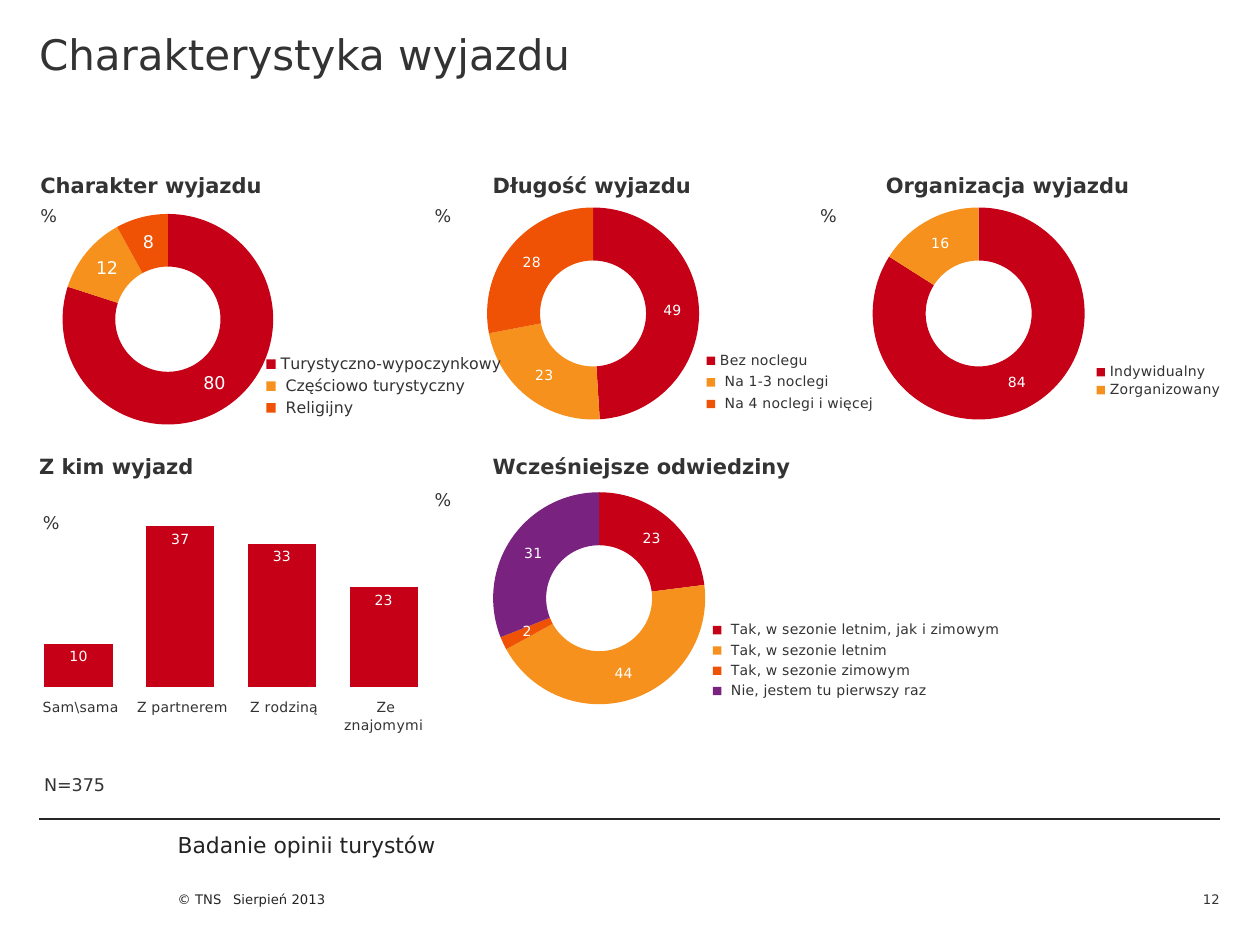
from lxml.etree import SubElement
from pptx import Presentation
from pptx.chart.data import CategoryChartData
from pptx.dml.color import RGBColor
from pptx.enum.chart import XL_CHART_TYPE, XL_LABEL_POSITION, XL_LEGEND_POSITION
from pptx.enum.shapes import MSO_CONNECTOR
from pptx.enum.text import MSO_ANCHOR, PP_ALIGN
from pptx.oxml import parse_xml
from pptx.oxml.ns import nsdecls, qn
from pptx.util import Inches, Pt

COLORS = {"text": "333333", "foot": "232323", "rule": "262626", "white": "FFFFFF",
          "black": "000000", "red": "C50017", "amber": "F7911E",
          "orange": "EF5205", "plum": "7A2280"}
SLICES = ("red", "amber", "orange", "plum")
COLS, ROWS = 100, 75


def tint(name):
    return RGBColor.from_string(COLORS[name])


class Page:
    """Style and slide; every length is in columns and rows of a 100 x 75 grid."""

    face = "DejaVu Sans"

    def __init__(self, deck):
        self.wide, self.high = deck.slide_width, deck.slide_height
        self.slide = deck.slides.add_slide(deck.slide_layouts[5])
        self.shapes = self.slide.shapes

    def box(self, x, y, w, h):
        return [int(x * self.wide / COLS), int(y * self.high / ROWS),
                int(w * self.wide / COLS), int(h * self.high / ROWS)]

    def style(self, font, size, color="text", bold=False):
        form = {"name": self.face, "size": Pt(size), "bold": bold}
        for key, val in form.items():
            setattr(font, key, val)
        font.color.rgb = tint(color)

    def fill(self, frame, words, size, color="text", bold=False, top=0,
             anchor=MSO_ANCHOR.TOP, align=PP_ALIGN.LEFT, tab=None):
        form = {"word_wrap": True, "vertical_anchor": anchor, "margin_left": 0,
                "margin_right": 0, "margin_top": Inches(top), "margin_bottom": 0}
        for key, val in form.items():
            setattr(frame, key, val)
        para = frame.paragraphs[0]
        para.alignment = align
        if tab:
            stops = SubElement(para._p.get_or_add_pPr(), qn("a:tabLst"))
            SubElement(stops, qn("a:tab"), pos=str(Inches(tab)), algn="l")
        run = para.add_run()
        run.text = words
        self.style(run.font, size, color, bold)

    def title(self, words, spot):
        shape = self.shapes.title
        shape.left, shape.top, shape.width, shape.height = self.box(*spot)
        self.fill(shape.text_frame, words, 24, top=0.23)

    def text(self, words, spot, size, **form):
        shape = self.shapes.add_textbox(*self.box(*spot))
        self.fill(shape.text_frame, words, size, **form)

    def rule(self, x, y, w):
        left, top, width, _ = self.box(x, y, w, 0)
        line = self.shapes.add_connector(MSO_CONNECTOR.STRAIGHT, left, top, left + width, top)
        line.line.color.rgb = tint("rule")
        line.line.width = Pt(0.75)
        SubElement(line._element.spPr, qn("a:effectLst"))

    def layout(self, node, index, place, inner=False):
        """Pin a chart part to x, y, w, h given as shares of the chart."""
        for old in node.findall(qn("c:layout")):
            node.remove(old)
        target = '<c:layoutTarget val="inner"/>' if inner else ""
        modes = "".join(f'<c:{k}Mode val="edge"/>' for k in "xy")
        sizes = "".join(f'<c:{k} val="{v}"/>' for k, v in zip("xywh", place))
        node.insert(index, parse_xml(
            f'<c:layout {nsdecls("c")}><c:manualLayout>{target}{modes}{sizes}'
            "</c:manualLayout></c:layout>"))

    def chart(self, kind, spot, data, plot, size):
        source = CategoryChartData(number_format="0")
        source.categories = list(data)
        source.add_series("Series 1", list(data.values()))
        chart = self.shapes.add_chart(kind, *self.box(*spot), source).chart
        self.style(chart.font, 8, "black")
        chart.has_title = chart.has_legend = False
        root = chart.element.find(qn("c:chart"))
        root.addnext(parse_xml(
            f'<c:spPr {nsdecls("c", "a")}><a:noFill/><a:ln><a:noFill/></a:ln></c:spPr>'))
        self.layout(root.find(qn("c:plotArea")), 0, plot, inner=True)
        body = chart.plots[0]
        body.has_data_labels = True
        labels = body.data_labels
        form = {"show_value": True, "show_percentage": False,
                "number_format": "0", "number_format_is_linked": False}
        for key, val in form.items():
            setattr(labels, key, val)
        self.style(labels.font, size, "white")
        return chart, body, root

    def ring(self, spot, data, key, plot=(0, 0.14, 0.52, 0.85), hole=40, size=8, note=8):
        """Doughnut; key is the legend's box on the slide grid."""
        chart, body, root = self.chart(XL_CHART_TYPE.DOUGHNUT, spot, data, plot, size)
        body.vary_by_categories = True
        root.find(".//" + qn("c:holeSize")).set("val", str(hole))
        for i, color in enumerate(SLICES[:len(data)]):
            form = body.series[0].points[i].format
            form.fill.solid()
            form.fill.fore_color.rgb = tint(color)
            form.line.fill.background()
        chart.has_legend = True
        chart.legend.position = XL_LEGEND_POSITION.RIGHT
        chart.legend.include_in_layout = False
        self.style(chart.legend.font, note)
        x, y, w, h = spot
        place = ((key[0] - x) / w, (key[1] - y) / h, key[2] / w, key[3] / h)
        self.layout(root.find(qn("c:legend")), 1, [round(v, 3) for v in place])

    def bars(self, spot, data, plot):
        chart, body, _ = self.chart(XL_CHART_TYPE.COLUMN_CLUSTERED, spot, data, plot, 8)
        body.gap_width = 49
        body.vary_by_categories = False
        body.data_labels.position = XL_LABEL_POSITION.INSIDE_END
        paint = body.series[0].format.fill
        paint.solid()
        paint.fore_color.rgb = tint("red")
        form = {"visible": False, "has_major_gridlines": False,
                "minimum_scale": 0, "maximum_scale": 40}
        for key, val in form.items():
            setattr(chart.value_axis, key, val)
        axis = chart.category_axis
        axis.format.line.fill.background()
        self.style(axis.tick_labels.font, 8)


def main():
    deck = Presentation()
    deck.slide_width, deck.slide_height = Inches(10), Inches(7.5)
    page = Page(deck)
    page.title("Charakterystyka wyjazdu", (3.1, 0, 93.7, 11.3))
    page.rule(3.1, 65, 93.7)
    page.text("Badanie opinii turystów", (14.1, 66, 33.1, 2.1), 12.5, color="foot")
    low = MSO_ANCHOR.BOTTOM
    page.text("© TNS\tSierpień 2013", (14.1, 69.2, 27.8, 2.8), 7.5,
              color="foot", anchor=low, tab=0.44)
    page.text("12", (91.3, 69.2, 5.5, 2.8), 7.5, anchor=low, align=PP_ALIGN.RIGHT)

    page.ring((38.6, 13.7, 32.6, 19.8),
              {"Bez noclegu": 49, " Na 1-3 noclegi": 23, " Na 4 noclegi i więcej": 28},
              (55.7, 27.6, 14, 5.5))
    page.ring((34.5, 36.3, 50.2, 19.8),
              {" Tak, w sezonie letnim, jak i zimowym": 23, " Tak, w sezonie letnim": 44,
               " Tak, w sezonie zimowym": 2, " Nie, jestem tu pierwszy raz": 31},
              (56.2, 49.1, 23.6, 6.7))
    page.ring((69.2, 13.7, 32.6, 19.8), {"Indywidualny": 84, "Zorganizowany": 16},
              (86.6, 28.8, 10.7, 2.9))
    page.ring((3.1, 13.8, 37.2, 19.9),
              {"Turystyczno-wypoczynkowy": 80, " Częściowo turystyczny": 12, " Religijny": 8},
              (20.8, 27.9, 19.3, 5.5), plot=(0, 0.16, 0.55, 0.84), hole=39, size=10, note=9)
    page.bars((2.2, 40.3, 32.3, 22.3),
              {" Sam\\sama": 10, " Z partnerem": 37, " Z rodziną": 33, " Ze znajomymi": 23},
              (0, 0.02, 1, 0.62))

    heads = (("Charakter wyjazdu", 3.2, 13.7), ("Długość wyjazdu", 39.1, 13.7),
             ("Organizacja wyjazdu", 70.3, 13.7), ("Z kim wyjazd", 3.1, 36),
             ("Wcześniejsze odwiedziny", 39.1, 36))
    for words, x, y in heads:
        page.text(words, (x, y, 26.8, 2.8), 12, bold=True)
    for x, y in ((3.2, 16.3), (34.5, 16.3), (65.1, 16.3), (3.4, 40.6), (34.5, 38.8)):
        page.text("%", (x, y, 3.6, 1.7), 10)
    page.text("N=375", (3.5, 61.4, 80, 3), 10)
    deck.save("out.pptx")


if __name__ == "__main__":
    main()
